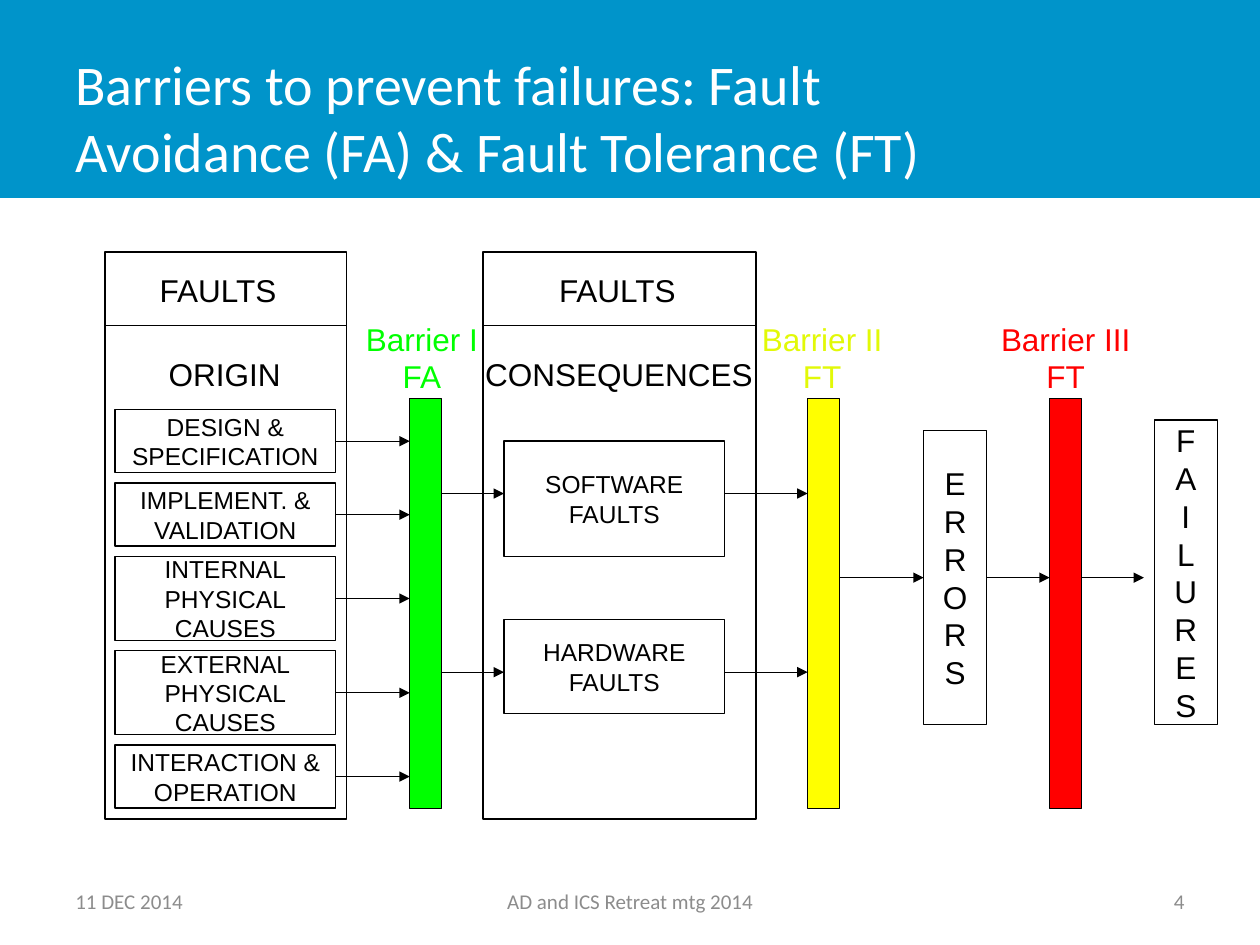
from lxml import etree
from pptx import Presentation
from pptx.dml.color import RGBColor
from pptx.enum.shapes import MSO_CONNECTOR, MSO_SHAPE
from pptx.enum.text import MSO_ANCHOR, PP_ALIGN
from pptx.oxml.ns import qn
from pptx.util import Cm, Pt

RECTANGLE = MSO_SHAPE.RECTANGLE
STRAIGHT = MSO_CONNECTOR.STRAIGHT
TOP, MIDDLE = MSO_ANCHOR.TOP, MSO_ANCHOR.MIDDLE
LEFT, CENTER, RIGHT = PP_ALIGN.LEFT, PP_ALIGN.CENTER, PP_ALIGN.RIGHT
LEFT_SIDE, RIGHT_SIDE = 1, 3

COLORS = {
    "black": "000000", "white": "FFFFFF", "banner": "0094CA", "footer": "8C8C8C",
    "green": "00FF00", "yellow": "FFFF00", "lime": "E2F907", "red": "FF0000",
}


def add_block(left, top, width, height, lines=(), outlined=True, fill=None, size=14,
              color="black", font="Arial", align=CENTER, anchor=MIDDLE, wrap=False):
    """Add a rectangle, or a plain text box if neither outlined nor filled."""
    bounds = Cm(left), Cm(top), Cm(width), Cm(height)
    if outlined or fill:
        shape = slide.shapes.add_shape(RECTANGLE, *bounds)
        shape.shadow.inherit = False
        if fill:
            shape.fill.solid()
            shape.fill.fore_color.rgb = RGBColor.from_string(COLORS[fill])
        else:
            shape.fill.background()
        if outlined:
            shape.line.color.rgb = RGBColor.from_string(COLORS["black"])
            shape.line.width = Pt(0.75)
        else:
            shape.line.fill.background()
    else:
        shape = slide.shapes.add_textbox(*bounds)
    frame = shape.text_frame
    frame.word_wrap = wrap
    frame.vertical_anchor = anchor
    for index, line in enumerate(lines):
        paragraph = frame.add_paragraph() if index else frame.paragraphs[0]
        paragraph.alignment = align
        run = paragraph.add_run()
        run.text = line
        run.font.name = font
        run.font.size = Pt(size)
        run.font.color.rgb = RGBColor.from_string(COLORS[color])
    return shape


def add_line(start, end, y, source=None, target=None, arrow=True):
    """Add a level line, joined to the source's right and the target's left side."""
    connector = slide.shapes.add_connector(STRAIGHT, start, y, end, y)
    connector.line.color.rgb = RGBColor.from_string(COLORS["black"])
    connector.line.width = Pt(0.75)
    if arrow:
        line = connector.line._get_or_add_ln()
        etree.SubElement(line, qn("a:tailEnd"), type="triangle")
    etree.SubElement(connector._element.spPr, qn("a:effectLst"))
    if source is not None:
        connector.begin_connect(source, RIGHT_SIDE)
    if target is not None:
        connector.end_connect(target, LEFT_SIDE)


presentation = Presentation()
presentation.slide_width = Cm(25.4)
presentation.slide_height = Cm(19.05)
slide = presentation.slides.add_slide(presentation.slide_layouts[6])

# Banner, title and footer
add_block(0, 0, 25.4, 3.99, outlined=False, fill="banner")
add_block(1.27, 0.76, 19.84, 3.18,
          ["Barriers to prevent failures: Fault Avoidance (FA) & Fault Tolerance (FT)"],
          outlined=False, size=32, color="white", font="Calibri", align=LEFT, wrap=True)
for left, width, text, align in [
    (1.27, 5.92, "11 DEC 2014", LEFT),
    (8.68, 8.05, "AD and ICS Retreat mtg 2014", CENTER),
    (18.21, 5.92, "4", RIGHT),
]:
    add_block(left, 17.65, width, 1.02, [text], outlined=False, size=12,
              color="footer", font="Calibri", align=align, wrap=True)

# The two fault columns with their headings
for left, width, heading_left, heading, label_left, label_width in [
    (2.12, 4.87, 2.97, "ORIGIN", 3.15, 2.77),
    (9.74, 5.5, 11.02, "CONSEQUENCES", 9.53, 5.92),
]:
    add_block(left, 5.08, width, 11.43)
    add_line(Cm(left), Cm(left + width), Cm(6.56), arrow=False)
    add_block(heading_left, 5.33, 2.95, 1.02, ["FAULTS"], outlined=False,
              size=18, align=LEFT, anchor=TOP)
    add_block(label_left, 7.04, label_width, 1.02, [heading], outlined=False,
              size=18, align=LEFT, anchor=TOP)

# Barriers
barriers = []
for left, fill, label_left, label_width, lines, color in [
    (8.26, "green", 7.11, 2.79, ["Barrier I", "FA"], "green"),
    (16.28, "yellow", 15.09, 2.97, ["Barrier II", "FT"], "lime"),
    (21.16, "red", 19.91, 3.15, ["Barrier III", "FT"], "red"),
]:
    barriers.append(add_block(left, 8.04, 0.64, 8.26, fill=fill))
    add_block(label_left, 6.32, label_width, 1.8, lines, outlined=False,
              size=18, color=color, anchor=TOP)
avoidance, tolerance, last_barrier = barriers

# Origins of faults, stacked with an equal gap
top = 8.26
for lines in [
    ["DESIGN &", "SPECIFICATION"],
    ["IMPLEMENT. &", "VALIDATION"],
    ["INTERNAL", "PHYSICAL", "CAUSES"],
    ["EXTERNAL", "PHYSICAL", "CAUSES"],
    ["INTERACTION &", "OPERATION"],
]:
    height = 1.69 if len(lines) == 3 else 1.27
    origin = add_block(2.32, top, 4.45, height, lines)
    add_line(origin.left + origin.width, avoidance.left,
             origin.top + origin.height // 2, source=origin)
    top += height + 0.21

# Consequences, between the first and second barrier
for top, height, arrow_y, kind in [
    (8.89, 2.33, 9.95, "SOFTWARE"),
    (12.49, 1.9, 13.55, "HARDWARE"),
]:
    consequence = add_block(10.16, top, 4.45, height, [kind, "FAULTS"])
    add_line(avoidance.left + avoidance.width, consequence.left, Cm(arrow_y))
    add_line(consequence.left + consequence.width, tolerance.left, Cm(arrow_y))

# Errors and failures, one letter a line
errors = add_block(18.62, 8.68, 1.27, 5.93, "ERRORS", size=18)
failures = add_block(23.27, 8.47, 1.27, 6.14, "FAILURES", size=18)
flow_y = errors.top + errors.height // 2
add_line(tolerance.left + tolerance.width, errors.left, flow_y, target=errors)
add_line(errors.left + errors.width, last_barrier.left, flow_y, source=errors)
add_line(last_barrier.left + last_barrier.width, Cm(23.06), flow_y)

presentation.save("out.pptx")
